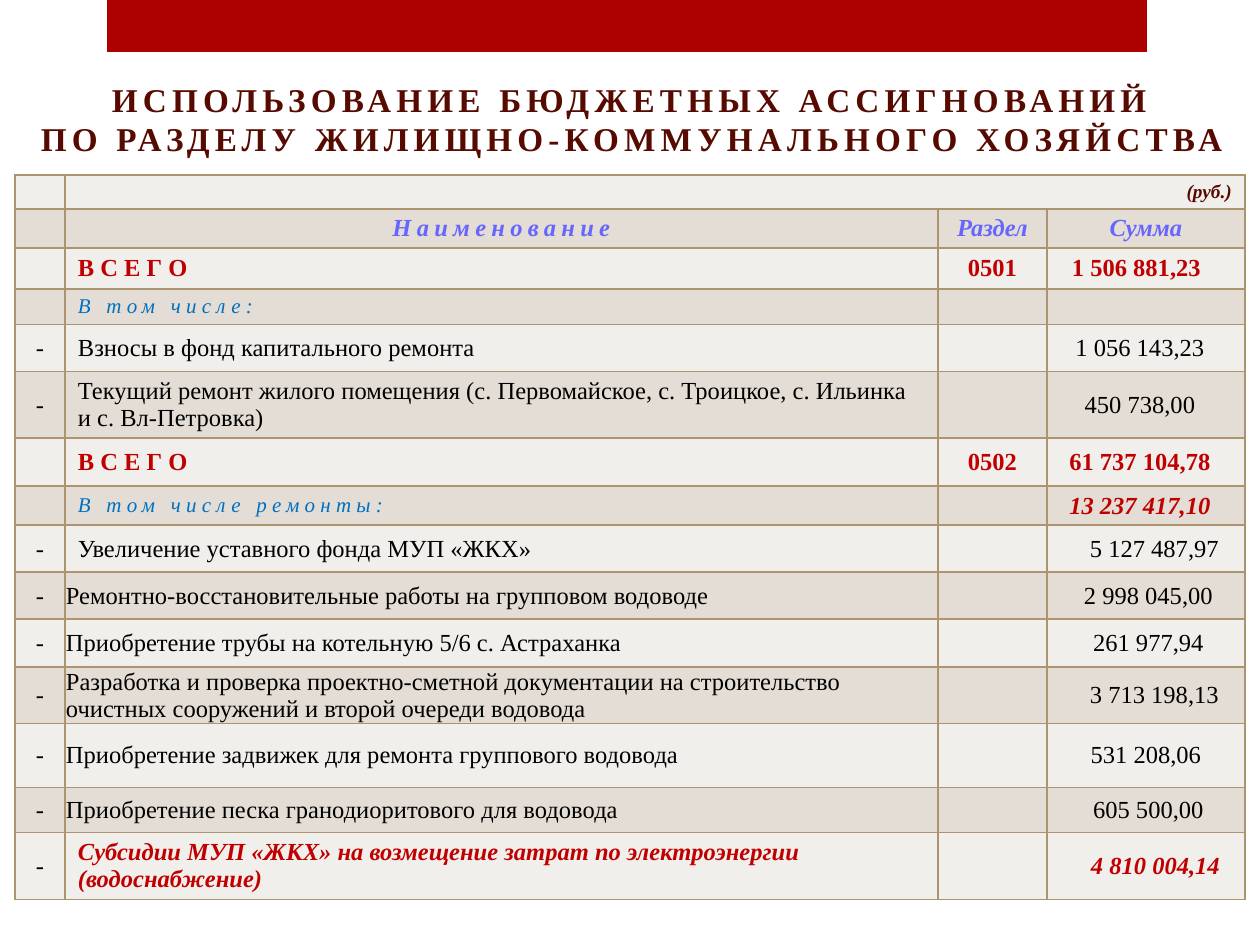
from lxml import etree
from pptx import Presentation
from pptx import util as u
from pptx.dml.color import RGBColor
from pptx.enum import shapes, text
from pptx.oxml import ns

SCALE = 914400 / 126  # EMU in one px
FACE = "Times New Roman"
RED, BLUE, DARK, BLACK = "C00000", "0070C0", "560A00", "000000"
EDGE, BANDS = "AC956E", ("F1EFEB", "E3DDD5")
LEFT, MID, RIGHT = text.PP_ALIGN.LEFT, text.PP_ALIGN.CENTER, text.PP_ALIGN.RIGHT

# Text formats: size, colour, bold, italic, letter spacing in points
HEAD = dict(size=14, color="6666FF", bold=True, italic=True)
WIDE = dict(HEAD, gap=3)
UNIT = dict(size=11, color=DARK, bold=True, italic=True)
TOTAL = dict(size=14, color=RED, bold=True, italic=False)
LOUD = dict(TOTAL, italic=True)
NOTE = dict(size=12, color=BLUE, bold=False, italic=True, gap=3)
ITEM = dict(size=14, color=BLACK, bold=False, italic=False)

# Left and right cell margins in px
STD, TIGHT, SUM = (13, 13), (1, 1), (13, 25)

COLS = (50, 873, 109, 198)
# Height, mark, name, section, amount, name format, amount format,
# name margins, amount margins
ROWS = [
    (34, "", "(руб.)", "", "", UNIT, UNIT, STD, SUM),
    (39, "", "Наименование", "Раздел", "Сумма", WIDE, HEAD, STD, STD),
    (41, "", "В С Е Г О", "0501", "1 506 881,23", TOTAL, TOTAL, STD, (13, 32)),
    (35, "", "В том числе:", "", "", NOTE, ITEM, STD, SUM),
    (47, "-", "Взносы в фонд капитального ремонта", "", "1 056 143,23",
     ITEM, ITEM, STD, SUM),
    (67, "-", "Текущий ремонт жилого помещения (с. Первомайское, "
     "с. Троицкое, с. Ильинка и с. Вл-Петровка)", "", "450 738,00",
     ITEM, ITEM, STD, SUM),
    (48, "", "В С Е Г О", "0502", "61 737 104,78", TOTAL, TOTAL, STD, SUM),
    (39, "", "В том числе ремонты:", "", "13 237 417,10",
     NOTE, LOUD, STD, SUM),
    (47, "-", "Увеличение уставного фонда МУП «ЖКХ»", "", "5 127 487,97",
     ITEM, ITEM, STD, (42, 25)),
    (47, "-", "Ремонтно-восстановительные работы на групповом водоводе", "",
     "2 998 045,00", ITEM, ITEM, TIGHT, (6, 1)),
    (48, "-", "Приобретение трубы на котельную 5/6 с. Астраханка", "",
     "261 977,94", ITEM, ITEM, TIGHT, (6, 1)),
    (56, "-", "Разработка и проверка проектно-сметной документации на "
     "строительство очистных сооружений и второй очереди водовода", "",
     "3 713 198,13", ITEM, ITEM, TIGHT, (18, 1)),
    (64, "-", "Приобретение задвижек для ремонта группового водовода", "",
     "531 208,06", ITEM, ITEM, TIGHT, TIGHT),
    (45, "-", "Приобретение песка гранодиоритового для водовода", "",
     "605 500,00", ITEM, ITEM, TIGHT, (6, 1)),
    (67, "-", "Субсидии МУП «ЖКХ» на возмещение затрат по электроэнергии "
     "(водоснабжение)", "", "4 810 004,14", LOUD, LOUD, STD, SUM),
]


def px(n):
    return u.Emu(round(n * SCALE))


def paint(fill, color):
    fill.solid()
    fill.fore_color.rgb = RGBColor.from_string(color)


def style(run, size, color, gap=0, **flags):
    font = run.font
    for key, val in dict(flags, name=FACE, size=u.Pt(size)).items():
        setattr(font, key, val)
    paint(font.fill, color)
    if gap:
        run._r.get_or_add_rPr().set("spc", str(gap * 100))


def write(par, words, fmt, align):
    par.text = words
    par.alignment = align
    for run in par.runs:
        style(run, **fmt)


def frame(cell):
    props = cell._tc.get_or_add_tcPr()
    for i, side in enumerate(("lnL", "lnR", "lnT", "lnB")):
        line = etree.Element(ns.qn("a:" + side), w=str(u.Pt(1)))
        fill = etree.SubElement(line, ns.qn("a:solidFill"))
        etree.SubElement(fill, ns.qn("a:srgbClr"), val=EDGE)
        props.insert(i, line)


def fill_cell(cell, words, fmt, align, sides, pad, anchor, band):
    margins = dict(margin_left=sides[0], margin_right=sides[1],
                   margin_top=pad, margin_bottom=pad)
    for key, val in margins.items():
        setattr(cell, key, px(val))
    cell.vertical_anchor = anchor
    paint(cell.fill, band)
    frame(cell)
    par = cell.text_frame.paragraphs[0]
    if words:
        write(par, words, fmt, align)
    else:  # a small end mark keeps low rows from growing
        etree.SubElement(par._p, ns.qn("a:endParaRPr"), sz="1000")


def add_bar(slide):
    bar = slide.shapes.add_shape(shapes.MSO_SHAPE.RECTANGLE,
                                 px(107), 0, px(1040), px(52))
    bar.shadow.inherit = False
    paint(bar.fill, "AD0101")
    bar.line.fill.background()


def set_title(slide, words):
    title = slide.shapes.title
    spot = dict(left=20, top=55, width=1225, height=110)
    for key, val in spot.items():
        setattr(title, key, px(val))
    body = title.text_frame
    body.auto_size = text.MSO_AUTO_SIZE.NONE
    body.vertical_anchor = text.MSO_ANCHOR.BOTTOM
    write(body.paragraphs[0], words,
          dict(size=19, color=DARK, bold=True, gap=3), MID)


def add_grid(slide):
    high = sum(row[0] for row in ROWS)
    grid = slide.shapes.add_table(len(ROWS), len(COLS), px(15), px(175),
                                  px(sum(COLS)), px(high)).table
    for col, wide in zip(grid.columns, COLS):
        col.width = px(wide)
    for r, row in enumerate(ROWS):
        tall, mark, name, part, total, look, sumlook, inset, shift = row
        grid.rows[r].height = px(tall)
        # Unit and header rows hang from the top; name column leads left
        anchor = text.MSO_ANCHOR.TOP if r < 2 else text.MSO_ANCHOR.MIDDLE
        lead = (RIGHT, MID)[r] if r < 2 else LEFT
        end = RIGHT if r == len(ROWS) - 1 else MID
        cells = [(mark, ITEM, MID, STD), (name, look, lead, inset),
                 (part, sumlook, MID, STD), (total, sumlook, end, shift)]
        for c, (words, fmt, align, sides) in enumerate(cells):
            pad = 6 if words and inset != TIGHT else 1
            fill_cell(grid.cell(r, c), words, fmt, align, sides, pad,
                      anchor, BANDS[r % 2])
    grid.cell(0, 1).merge(grid.cell(0, 3))


def main():
    deck = Presentation()
    deck.slide_width, deck.slide_height = px(1260), px(945)
    slide = deck.slides.add_slide(deck.slide_layouts[5])
    add_bar(slide)
    set_title(slide, "ИСПОЛЬЗОВАНИЕ БЮДЖЕТНЫХ АССИГНОВАНИЙ\v"
                     "ПО РАЗДЕЛУ ЖИЛИЩНО-КОММУНАЛЬНОГО ХОЗЯЙСТВА")
    add_grid(slide)
    deck.save("out.pptx")


if __name__ == "__main__":
    main()
